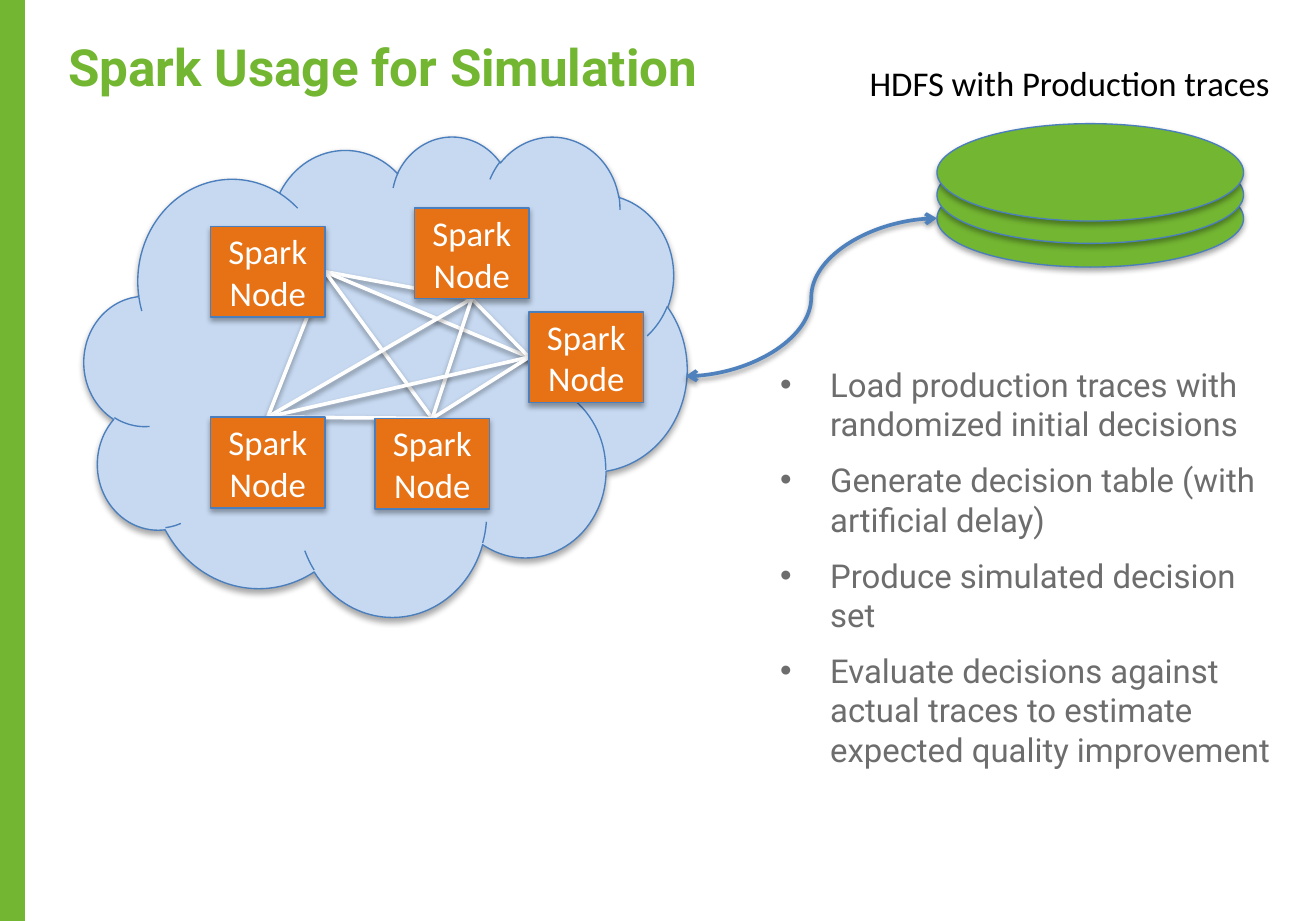
import dataclasses
import itertools
import typing

import lxml.etree
import pptx
import pptx.dml.color
import pptx.enum.shapes
import pptx.enum.text
import pptx.oxml.ns
import pptx.util

Inches = pptx.util.Inches
Pt = pptx.util.Pt
Shapes = pptx.enum.shapes.MSO_SHAPE
Connectors = pptx.enum.shapes.MSO_CONNECTOR
Align = pptx.enum.text.PP_ALIGN
Anchor = pptx.enum.text.MSO_ANCHOR
qn = pptx.oxml.ns.qn


@dataclasses.dataclass(frozen=True)
class Theme:
    green: str = "73B632"
    orange: str = "E77215"
    cloud: str = "C6D9F1"
    outline: str = "4B7EBC"
    arrow: str = "4F81BD"
    white: str = "FFFFFF"
    black: str = "000000"
    gray: str = "6D6D6D"
    heading_font: str = "Roboto"
    label_font: str = "Calibri"
    title_size: float = 28
    label_size: float = 19
    bullet_size: float = 18
    outline_width: float = 0.75
    link_width: float = 2


@dataclasses.dataclass(frozen=True)
class Area:
    left: float
    top: float
    width: float
    height: float

    def lengths(self) -> list[int]:
        return [Inches(value) for value in dataclasses.astuple(self)]


@dataclasses.dataclass(frozen=True)
class Node:
    left: float
    top: float
    port: tuple[float, float]
    label: str = "Spark Node"

    def area(self) -> Area:
        return Area(self.left, self.top, 0.87, 0.69)

    def port_point(self) -> tuple[float, float]:
        area = self.area()
        across, down = self.port
        return area.left + across * area.width, area.top + down * area.height


THEME = Theme()
RIGHT, BOTTOM, LEFT, TOP = (1, 0.5), (0.5, 1), (0, 0.5), (0.5, 0)
NODES = [
    Node(1.6, 1.72, RIGHT, "Spark\nNode"),
    Node(3.15, 1.58, BOTTOM),
    Node(4.02, 2.37, LEFT),
    Node(1.6, 3.17, TOP),
    Node(2.85, 3.18, TOP),
]
DISK_TOPS = [1.29, 1.11, 0.94]
STEPS = [
    "Load production traces with randomized initial decisions",
    "Generate decision table (with artificial delay)",
    "Produce simulated decision set",
    "Evaluate decisions against actual traces to estimate expected quality improvement",
]


def rgb(color: str) -> pptx.dml.color.RGBColor:
    return pptx.dml.color.RGBColor.from_string(color)


def add_child(parent: typing.Any, tag: str, **attributes: typing.Any) -> typing.Any:
    values = {name: str(value) for name, value in attributes.items()}
    return lxml.etree.SubElement(parent, qn(tag), values)


def add_shadow(item: typing.Any, opacity: int, distance: float) -> None:
    effects = add_child(item._element.spPr, "a:effectLst")
    shadow = add_child(effects, "a:outerShdw", blurRad=Pt(3.1), dist=Pt(distance),
                       dir=90 * 60000, rotWithShape=0)
    color = add_child(shadow, "a:srgbClr", val=THEME.black)
    add_child(color, "a:alpha", val=opacity * 1000)


def write_text(frame: typing.Any, text: str, *, size: float, font: str, color: str,
               bold: bool = False, align: typing.Any = Align.LEFT,
               anchor: typing.Any = Anchor.TOP, bottom_inset: float = 0.05,
               bullet: str = "", gap: float = 0) -> None:
    frame.word_wrap = True
    frame.vertical_anchor = anchor
    frame.margin_bottom = Inches(bottom_inset)
    for index, line in enumerate(text.split("\n")):
        para = frame.add_paragraph() if index else frame.paragraphs[0]
        if bullet:
            properties = para._p.get_or_add_pPr()
            properties.set("marL", str(Inches(0.38)))
            properties.set("indent", str(Inches(-0.38)))
            add_child(properties, "a:buFont", typeface="Arial")
            add_child(properties, "a:buChar", char=bullet)
        para.alignment = align
        if index and gap:
            para.space_before = Pt(gap)
        span = para.add_run()
        span.text = line
        span.font.name = font
        span.font.size = Pt(size)
        span.font.bold = bold
        span.font.color.rgb = rgb(color)


def add_text(page: typing.Any, area: Area, text: str, **text_format: typing.Any) -> None:
    box = page.shapes.add_textbox(*area.lengths())
    write_text(box.text_frame, text, **text_format)


def add_block(page: typing.Any, preset: typing.Any, area: Area, fill: str,
              raised: bool = True) -> typing.Any:
    block = page.shapes.add_shape(preset, *area.lengths())
    block.fill.solid()
    block.fill.fore_color.rgb = rgb(fill)
    if raised:
        block.line.color.rgb = rgb(THEME.outline)
        block.line.width = Pt(THEME.outline_width)
        add_shadow(block, 35, 1.8)
    else:
        block.line.fill.background()
        block.shadow.inherit = False
    return block


def add_link(page: typing.Any, kind: typing.Any, start: tuple[float, float],
             end: tuple[float, float], color: str, arrows: bool = False) -> None:
    link = page.shapes.add_connector(kind, *[Inches(value) for value in (*start, *end)])
    link.line.color.rgb = rgb(color)
    link.line.width = Pt(THEME.link_width)
    if arrows:
        for tag in ("a:headEnd", "a:tailEnd"):
            add_child(link.line._get_or_add_ln(), tag, type="arrow")
    add_shadow(link, 38, 1.6)


def add_cluster(page: typing.Any) -> None:
    for first, second in itertools.combinations(NODES, 2):
        add_link(page, Connectors.STRAIGHT, first.port_point(), second.port_point(),
                 THEME.white)
    for node in NODES:
        block = add_block(page, Shapes.RECTANGLE, node.area(), THEME.orange)
        write_text(block.text_frame, node.label, size=THEME.label_size,
                   font=THEME.label_font, color=THEME.white, align=Align.CENTER,
                   anchor=Anchor.MIDDLE)


def main() -> None:
    deck = pptx.Presentation()
    deck.slide_width, deck.slide_height = Inches(10), Inches(7)
    page = deck.slides.add_slide(deck.slide_layouts[6])
    add_block(page, Shapes.CLOUD, Area(0.64, 1.03, 4.58, 3.65), THEME.cloud)
    add_block(page, Shapes.RECTANGLE, Area(0, 0, 0.19, 7), THEME.green, raised=False)
    add_text(page, Area(0.42, 0.22, 9.21, 0.72), "Spark Usage for Simulation",
             size=THEME.title_size, font=THEME.heading_font, color=THEME.green,
             bold=True, bottom_inset=0)
    add_cluster(page)
    for top in DISK_TOPS:
        add_block(page, Shapes.OVAL, Area(7.12, top, 2.33, 0.74), THEME.green)
    add_link(page, Connectors.CURVE, (5.21, 2.86), (7.12, 1.66), THEME.arrow, arrows=True)
    add_text(page, Area(6.51, 0.42, 3.31, 0.42), "HDFS with Production traces",
             size=THEME.label_size, font=THEME.label_font, color=THEME.black)
    add_text(page, Area(5.83, 2.72, 3.95, 3.53), "\n".join(STEPS),
             size=THEME.bullet_size, font=THEME.heading_font, color=THEME.gray,
             bullet="•", gap=THEME.bullet_size / 2)
    deck.save("out.pptx")


if __name__ == "__main__":
    main()
